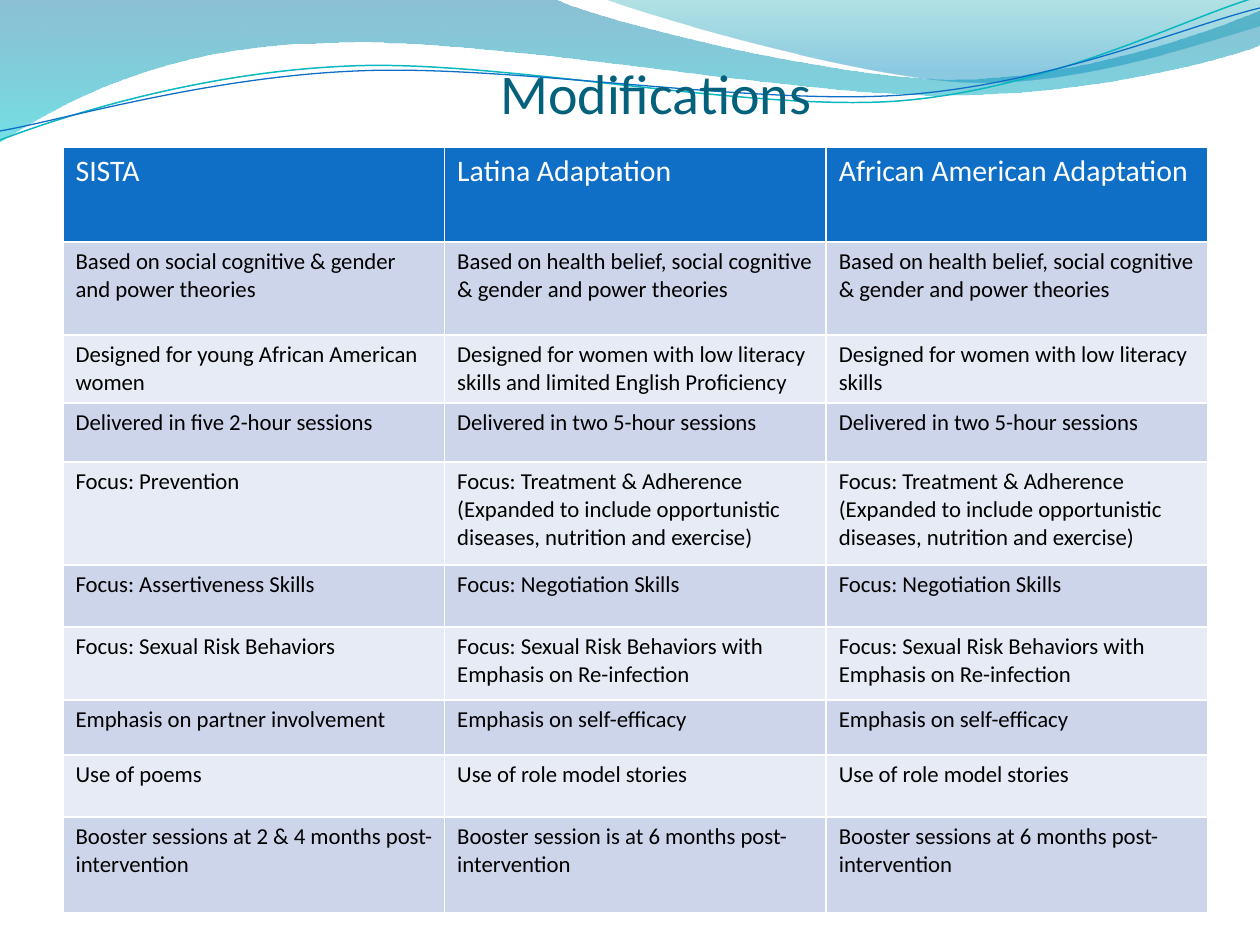
import lxml.etree
import pptx
import pptx.dml.color
import pptx.enum.text
import pptx.oxml.ns
import pptx.util

SCALE = 914400 / 126
FONT = "Calibri"
COLORS = {
    "title": "04617B", "header": "0F6FC6", "band": "CCD5EA", "plain": "E7EBF5",
    "white": "FFFFFF", "black": "000000", "teal_line": "0AB8BF", "blue_line": "0F6FC6",
    "wave_top": "0074A1", "wave_bottom": "00C6CF", "crest_top": "00A1A9", "crest_bottom": "008BBF",
}
WAVE = [[(0, 0)], [(554, -1)], [(600, 21), (837, 79), (955, 79)], [(1075, 79), (1207, 33), (1260, 11)],
        [(1261, 45)], [(1239, 55), (1096, 96), (940, 95)], [(784, 95), (481, 35), (324, 43)],
        [(163, 45), (58, 105), (-1, 142)], [(0, 0)]]
CREST = [[(604, -1)], [(641, 14), (859, 78), (969, 82)], [(1079, 86), (1211, 40), (1260, 26)],
         [(1260, 0)], [(604, -1)]]
TEAL_CURVE = [[(0, 140)], [(60, 117), (199, 72), (349, 66)], [(498, 59), (747, 112), (898, 101)],
              [(1050, 89), (1182, 19), (1257, -3)]]
BLUE_CURVE = [[(0, 131)], [(59, 121), (207, 77), (357, 71)], [(508, 64), (752, 106), (903, 95)],
              [(1053, 84), (1186, 26), (1260, 8)]]

THEORIES = "Based on health belief, social cognitive & gender and power theories"
TREATMENT = "Focus: Treatment & Adherence\n(Expanded to include opportunistic diseases, nutrition and exercise)"
RISK = "Focus: Sexual Risk Behaviors with Emphasis on Re-infection"
ROWS = [
    (95, "SISTA", "Latina Adaptation", "African American Adaptation"),
    (93, "Based on social cognitive & gender and power theories", THEORIES, THEORIES),
    (59, "Designed for young African American women",
     "Designed for women with low literacy skills and limited English Proficiency",
     "Designed for women with low literacy skills"),
    (59, "Delivered in five 2-hour sessions", "Delivered in two 5-hour sessions", "Delivered in two 5-hour sessions"),
    (103, "Focus: Prevention", TREATMENT, TREATMENT),
    (62, "Focus: Assertiveness Skills", "Focus: Negotiation Skills", "Focus: Negotiation Skills"),
    (73, "Focus: Sexual Risk Behaviors", RISK, RISK),
    (55, "Emphasis on partner involvement", "Emphasis on self-efficacy", "Emphasis on self-efficacy"),
    (62, "Use of poems", "Use of role model stories", "Use of role model stories"),
    (96, "Booster sessions at 2 & 4 months post-intervention", "Booster session is at 6 months post-intervention",
     "Booster sessions at 6 months post-intervention"),
]


def px(length):
    """Turn px into EMU."""
    return pptx.util.Emu(round(length * SCALE))


def color(name):
    """Look up a named colour."""
    return pptx.dml.color.RGBColor.from_string(COLORS[name])


def add_outline(page, box, segments, closed):
    """Draw straight and cubic segments offset by the box corner."""
    left, top = box[:2]
    points = [(left + x, top + y) for segment in segments for x, y in segment]
    builder = page.shapes.build_freeform(*points[0], scale=SCALE)
    builder.add_line_segments(points[1:], close=closed)
    shape = builder.convert_to_shape()
    shape.shadow.inherit = False
    lines = iter(list(shape.element.iter(pptx.oxml.ns.qn("a:lnTo"))))
    for segment in segments[1:]:
        first, *others = [next(lines) for point in segment]
        if others:
            first.tag = pptx.oxml.ns.qn("a:cubicBezTo")
        for line in others:
            first.append(line[0])
            line.getparent().remove(line)
    return shape


def add_banner(page, box):
    """Draw the two translucent waves and the two thin curves."""
    for segments, stops in (
        (WAVE, ((0, "wave_top", 45), (1, "wave_bottom", 55))),
        (CREST, ((0, "crest_top", 30), (0.8, "crest_bottom", 45))),
    ):
        shape = add_outline(page, box, segments, True)
        shape.line.fill.background()
        shape.fill.gradient()
        shape.fill.gradient_angle = 270
        for stop, (position, name, opacity) in zip(shape.fill.gradient_stops, stops):
            stop.position = position
            stop.color.rgb = color(name)
        tints = list(shape.element.spPr.iter(pptx.oxml.ns.qn("a:srgbClr")))
        for tint, (position, name, opacity) in zip(tints, stops):
            lxml.etree.SubElement(tint, pptx.oxml.ns.qn("a:alpha"), val=str(opacity * 1000))
    for segments, name, width in ((TEAL_CURVE, "teal_line", 0.85), (BLUE_CURVE, "blue_line", 0.75)):
        shape = add_outline(page, box, segments, False)
        shape.fill.background()
        shape.line.color.rgb = color(name)
        shape.line.width = pptx.util.Pt(width)


def style_paragraph(para, size, name):
    """Set the font of one paragraph."""
    para.font.name = FONT
    para.font.size = pptx.util.Pt(size)
    para.font.bold = False
    para.font.color.rgb = color(name)


def add_title(page, box):
    """Place the title in front of the banner."""
    title = page.shapes.title
    title.left, title.top, title.width, title.height = map(px, box)
    frame = title.text_frame
    frame.text = "Modifications"
    frame.word_wrap = True
    frame.auto_size = pptx.enum.text.MSO_AUTO_SIZE.NONE
    frame.vertical_anchor = pptx.enum.text.MSO_ANCHOR.BOTTOM
    frame.margin_left = frame.margin_right = frame.margin_bottom = 0
    frame.margin_top = px(6)
    para = frame.paragraphs[0]
    para.alignment = pptx.enum.text.PP_ALIGN.CENTER
    style_paragraph(para, 32, "title")
    page.shapes.element.append(title.element)


def add_comparison(page, box):
    """Fill the comparison table with a header and banded rows."""
    columns = len(ROWS[0]) - 1
    table = page.shapes.add_table(len(ROWS), columns, *map(px, box)).table
    for column in table.columns:
        column.width = px(box[2] / columns)
    for number, (height, *texts) in enumerate(ROWS):
        table.rows[number].height = px(height)
        fill = "header" if number == 0 else "band" if number % 2 else "plain"
        size, ink = (17, "white") if number == 0 else (13, "black")
        for cell, text in zip(table.rows[number].cells, texts):
            cell.fill.solid()
            cell.fill.fore_color.rgb = color(fill)
            cell.text = text
            for para in cell.text_frame.paragraphs:
                style_paragraph(para, size, ink)


def main():
    """Build and save the deck."""
    deck = pptx.Presentation()
    deck.slide_width, deck.slide_height = px(1260), px(945)
    page = deck.slides.add_slide(deck.slide_layouts[0])
    subtitle = page.placeholders[1].element
    subtitle.getparent().remove(subtitle)
    add_banner(page, (0, 0, 1260, 142))
    add_title(page, (220, 53, 872, 73))
    add_comparison(page, (63, 147, 1145, sum(row[0] for row in ROWS)))
    deck.save("out.pptx")


if __name__ == "__main__":
    main()
